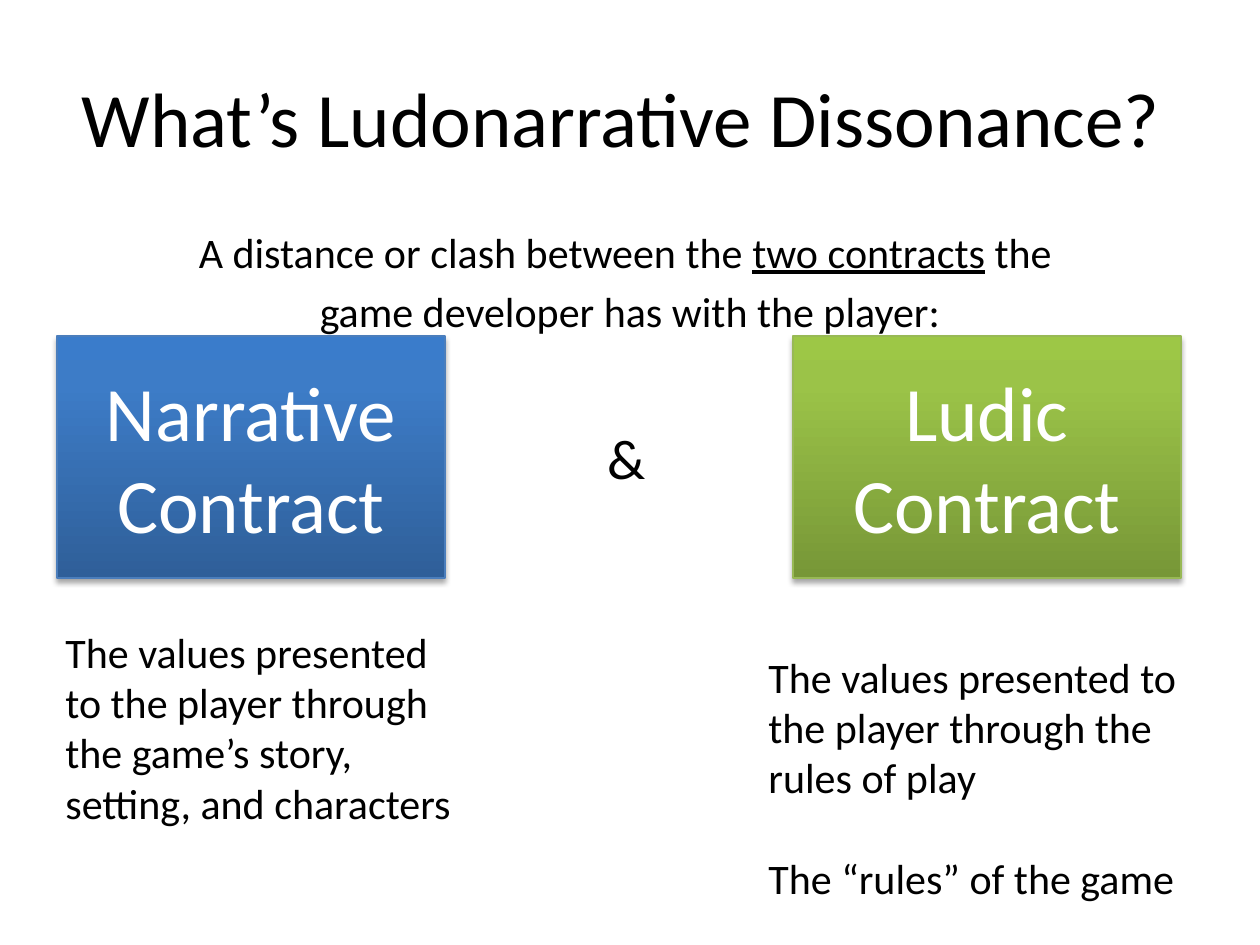
from lxml import etree
from pptx import Presentation
from pptx import util as u
from pptx.dml.color import RGBColor
from pptx.enum import shapes, text
from pptx.oxml.ns import nsdecls

PX = 914400 // 126
FONT = "Calibri"
CENTER, LEFT = text.PP_ALIGN.CENTER, text.PP_ALIGN.LEFT
TOP, MIDDLE = text.MSO_ANCHOR.TOP, text.MSO_ANCHOR.MIDDLE

TEXTS = [
    ((63, 38, 1134, 158), 44, CENTER, MIDDLE, 0,
     [["What’s Ludonarrative Dissonance? "]]),
    ((63, 220, 1134, 105), 24, CENTER, TOP, 4.8,
     [["A distance or clash between the ", "two contracts", " the "],
      ["game developer has with the player:"]]),
    ((517, 417, 220, 81), 32, CENTER, TOP, 0, [["&"]]),
    ((53, 620, 420, 217), 24, LEFT, TOP, 0,
     [["The values presented to the player through the game’s story, "
       "setting, and characters"]]),
    ((756, 645, 472, 267), 24, LEFT, TOP, 28.8,
     [["The values presented to the player through the rules of play"],
      ["The “rules” of the game"]]),
]
UNDERLINED = {"two contracts"}

CONTRACT_TOP, CONTRACT_WIDTH, CONTRACT_HEIGHT = 336, 388, 242
CONTRACTS = [
    ("Ludic Contract", 793, ("779737", "9BC348", "9DC746"), "98B955"),
    ("Narrative Contract", 57, ("2F5F99", "3D7CC7", "3A7CCB"), "4B7EBC"),
]
GRADIENT_STOPS = (0, 80, 100)


def color(value):
    return RGBColor.from_string(value)


def emu(box):
    return [length * PX for length in box]


def write(shape, paragraphs, size, ink, alignment, anchor, gap=0):
    frame = shape.text_frame
    frame.word_wrap = True
    frame.vertical_anchor = anchor
    for index, pieces in enumerate(paragraphs):
        paragraph = frame.add_paragraph() if index else frame.paragraphs[0]
        paragraph.alignment = alignment
        paragraph.space_before = u.Pt(gap if index else 0)
        for piece in pieces:
            run = paragraph.add_run()
            run.text = piece
            run.font.name = FONT
            run.font.size = u.Pt(size)
            run.font.color.rgb = color(ink)
            if piece in UNDERLINED:
                run.font.underline = True


def fill_gradient(shape, colors):
    shape.fill.gradient()
    stops = "".join(
        f'<a:gs pos="{position * 1000}"><a:srgbClr val="{value}"/></a:gs>'
        for position, value in zip(GRADIENT_STOPS, colors))
    gradient = etree.fromstring(
        f'<a:gradFill {nsdecls("a")} rotWithShape="1"><a:gsLst>{stops}</a:gsLst>'
        '<a:lin ang="16200000" scaled="0"/></a:gradFill>')
    properties = shape._element.spPr
    properties.replace(properties.gradFill, gradient)


def add_shadow(shape):
    shape.shadow.inherit = False
    effects = shape._element.spPr.find("{*}effectLst")
    effects.append(etree.fromstring(
        f'<a:outerShdw {nsdecls("a")} blurRad="{u.Pt(3.1)}" dist="{u.Pt(1.8)}" '
        'dir="5400000" rotWithShape="0"><a:srgbClr val="000000">'
        '<a:alpha val="35000"/></a:srgbClr></a:outerShdw>'))


def add_contract(slide, label, left, colors, outline):
    box = (left, CONTRACT_TOP, CONTRACT_WIDTH, CONTRACT_HEIGHT)
    shape = slide.shapes.add_shape(shapes.MSO_SHAPE.RECTANGLE, *emu(box))
    fill_gradient(shape, colors)
    shape.line.color.rgb = color(outline)
    shape.line.width = u.Pt(0.75)
    add_shadow(shape)
    write(shape, [[label]], 44, "FFFFFF", CENTER, MIDDLE)


def main():
    presentation = Presentation()
    presentation.slide_width = 1260 * PX
    presentation.slide_height = 945 * PX
    slide = presentation.slides.add_slide(presentation.slide_layouts[6])
    for box, size, alignment, anchor, gap, paragraphs in TEXTS:
        shape = slide.shapes.add_textbox(*emu(box))
        write(shape, paragraphs, size, "000000", alignment, anchor, gap)
    for contract in CONTRACTS:
        add_contract(slide, *contract)
    presentation.save("out.pptx")


if __name__ == "__main__":
    main()
